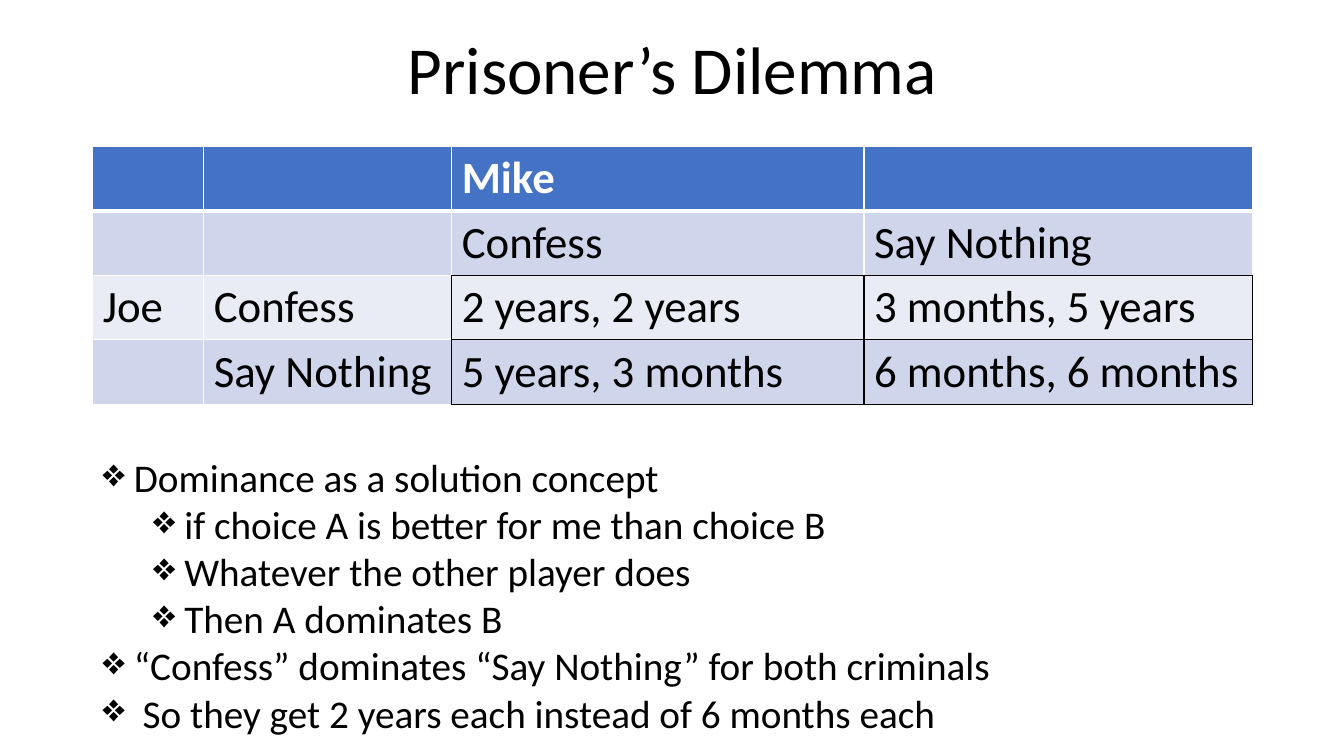
from dataclasses import dataclass

from lxml.etree import SubElement
from pptx import Presentation
from pptx.dml.color import RGBColor
from pptx.enum.text import MSO_ANCHOR as Anchor, PP_ALIGN as Align
from pptx.oxml.ns import qn
from pptx.util import Inches, Pt


@dataclass(frozen=True)
class Theme:
    font: str = "Calibri"
    text: str = "000000"
    white: str = "FFFFFF"
    header: str = "4472C4"
    band_dark: str = "CFD5EA"
    band_light: str = "E9EBF5"
    title_size: int = 48
    table_size: int = 32
    body_size: int = 28


THEME = Theme()
LEFT, WIDTH = 0.92, 11.5
COLUMN_WIDTHS = [1.1, 2.46, 4.09, 3.85]
ROW_HEIGHT = 0.64
FIRST_PAYOFF = 2  # payoffs start at this row and this column

GAME = [
    ["", "", "Mike", ""],
    ["", "", "Confess", "Say Nothing"],
    ["Joe", "Confess", "2 years, 2 years", "3 months, 5 years"],
    ["", "Say Nothing", "5 years, 3 months", "6 months, 6 months"],
]
ARGUMENT = [
    (0, "Dominance as a solution concept"),
    (1, "if choice A is better for me than choice B"),
    (1, "Whatever the other player does"),
    (1, "Then A dominates B"),
    (0, "“Confess” dominates “Say Nothing” for both criminals"),
    (0, " So they get 2 years each instead of 6 months each"),
]


def style_text(paragraph, size, color=THEME.text, bold=False):
    for run in paragraph.runs:
        run.font.name = THEME.font
        run.font.size = Pt(size)
        run.font.bold = bold
        run.font.color.rgb = RGBColor.from_string(color)


def add_text_area(slide, top, height):
    area = slide.shapes.add_textbox(Inches(LEFT), Inches(top), Inches(WIDTH), Inches(height))
    area.text_frame.word_wrap = True
    return area.text_frame


def add_title(slide, wording):
    title = add_text_area(slide, 0, 1.45)
    title.vertical_anchor = Anchor.MIDDLE
    heading = title.paragraphs[0]
    heading.text = wording
    heading.alignment = Align.CENTER
    heading.line_spacing = 0.9
    style_text(heading, THEME.title_size)


def is_payoff(row, column):
    return (FIRST_PAYOFF <= row < len(GAME)
            and FIRST_PAYOFF <= column < len(COLUMN_WIDTHS))


def add_borders(cell, row, column):
    """Payoff cells are boxed in black, everything else in white."""
    neighbours = {"lnL": (row, column - 1), "lnR": (row, column + 1),
                  "lnT": (row - 1, column), "lnB": (row + 1, column)}
    properties = cell._tc.get_or_add_tcPr()
    for side, neighbour in neighbours.items():
        boxed = is_payoff(row, column) or is_payoff(*neighbour)
        under_header = (row, side) in [(0, "lnB"), (1, "lnT")]
        line = SubElement(properties, qn(f"a:{side}"), w=str(Pt(3 if under_header else 1)))
        fill = SubElement(line, qn("a:solidFill"))
        SubElement(fill, qn("a:srgbClr"), val=THEME.text if boxed else THEME.white)


def add_payoff_table(slide):
    frame = slide.shapes.add_table(
        len(GAME), len(COLUMN_WIDTHS), Inches(LEFT), Inches(1.45),
        Inches(WIDTH), Inches(ROW_HEIGHT * len(GAME)))
    payoffs = frame.table
    payoffs.horz_banding = False
    for column, width in zip(payoffs.columns, COLUMN_WIDTHS):
        column.width = Inches(width)
    row_fills = [THEME.header, THEME.band_dark, THEME.band_light, THEME.band_dark]
    for r, (wordings, row_fill) in enumerate(zip(GAME, row_fills)):
        payoffs.rows[r].height = Inches(ROW_HEIGHT)
        for c, wording in enumerate(wordings):
            cell = payoffs.cell(r, c)
            add_borders(cell, r, c)
            cell.fill.solid()
            cell.fill.fore_color.rgb = RGBColor.from_string(row_fill)
            cell.text_frame.text = wording
            header = r == 0
            style_text(cell.text_frame.paragraphs[0], THEME.table_size,
                       THEME.white if header else THEME.text, bold=header)


def add_argument(slide):
    argument = add_text_area(slide, 4.45, 2.93)
    for index, (level, wording) in enumerate(ARGUMENT):
        point = argument.add_paragraph() if index else argument.paragraphs[0]
        point.text = wording
        point.level = level
        style_text(point, THEME.body_size)
        # Hanging diamond bullet
        properties = point._p.get_or_add_pPr()
        properties.set("marL", str(Inches(0.31 + 0.5 * level)))
        properties.set("indent", str(Inches(-0.31)))
        SubElement(properties, qn("a:buChar"), char="❖")


def main():
    deck = Presentation()
    deck.slide_width, deck.slide_height = Inches(13.33), Inches(7.5)
    slide = deck.slides.add_slide(deck.slide_layouts[6])
    add_title(slide, "Prisoner’s Dilemma")
    add_payoff_table(slide)
    add_argument(slide)
    deck.save("out.pptx")


if __name__ == "__main__":
    main()
